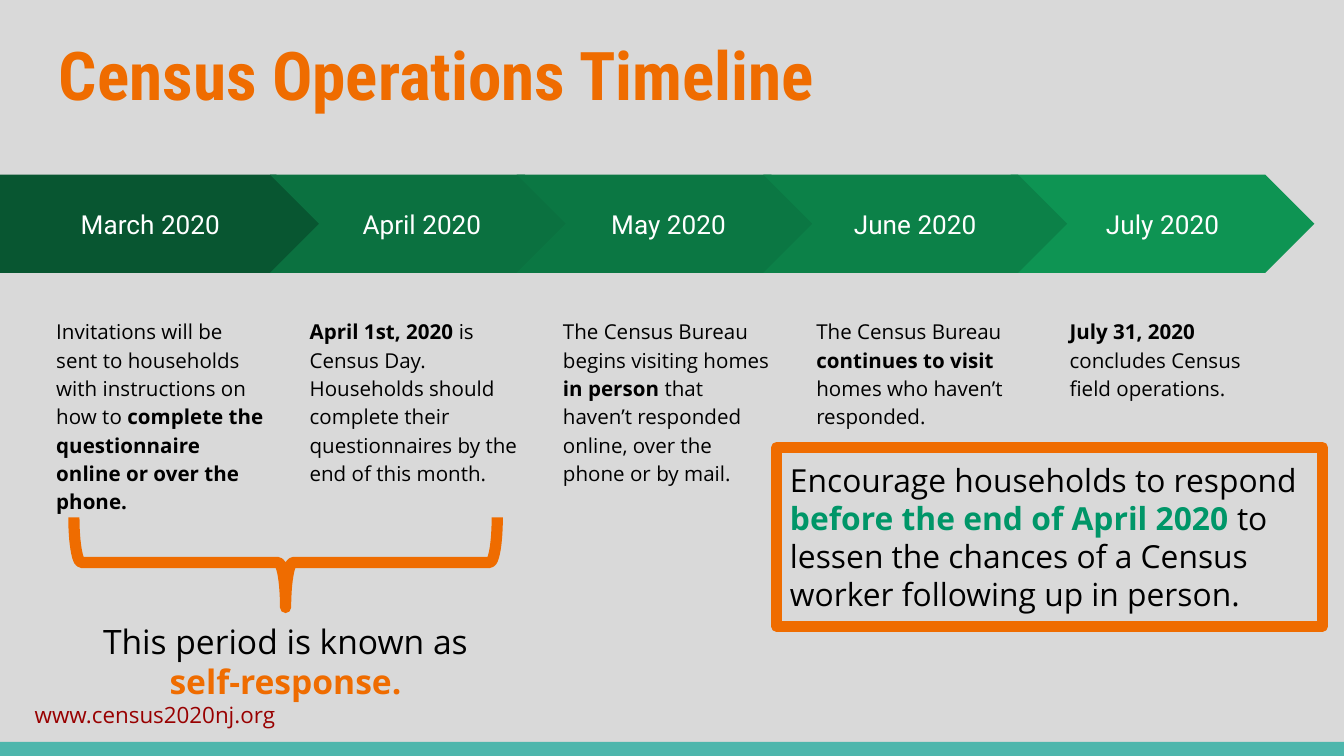
"""Build the census operations timeline slide."""
from dataclasses import dataclass

from lxml import etree
from pptx import Presentation
from pptx import util as u
from pptx.dml.color import RGBColor
from pptx.enum import shapes, text
from pptx.oxml.ns import qn

PX = 4572


@dataclass(frozen=True)
class Theme:
    """Colours, fonts and type sizes."""
    back: str = "D9D9D9"
    ink: str = "000000"
    white: str = "FFFFFF"
    accent: str = "EF6C00"
    green: str = "009668"
    teal: str = "4DB6AC"
    link: str = "980000"
    steps: tuple = ("085631", "0B7140", "0B7743", "0C8148", "0E9453")
    body: str = "Open Sans"
    label: str = "Roboto"
    head: str = "Roboto Condensed"
    title: int = 36
    large: int = 18
    call: int = 17
    month: int = 14
    small: int = 12
    note: int = 11


def write(shape, words, size, font, color, bold=None, align="LEFT", anchor="TOP", space=None):
    """Fill a shape with text whose starred parts are bold in the bold colour."""
    frame = shape.text_frame
    frame.word_wrap = True
    frame.vertical_anchor = getattr(text.MSO_ANCHOR, anchor)
    frame.margin_left = frame.margin_right = frame.margin_top = frame.margin_bottom = 20 * PX
    para = frame.paragraphs[0]
    para.alignment = getattr(text.PP_ALIGN, align)
    if space:
        para.line_spacing = space
    for n, part in enumerate(words.split("*")):
        if part:
            run = para.add_run()
            run.text = part
            run.font.name = font
            run.font.size = u.Pt(size)
            run.font.bold = n % 2 == 1
            run.font.color.rgb = RGBColor.from_string((bold or color) if n % 2 else color)


class Deck:
    """Hold the theme and the current slide."""

    def __init__(self, theme):
        """Open a blank slide with a plain background."""
        self.theme = theme
        self.show = Presentation()
        self.show.slide_width, self.show.slide_height = 2000 * PX, 1125 * PX
        self.slide = self.show.slides.add_slide(self.show.slide_layouts[6])
        fill = self.slide.background.fill
        fill.solid()
        fill.fore_color.rgb = RGBColor.from_string(theme.back)

    def label(self, box, words, **style):
        """Add a text box."""
        shape = self.slide.shapes.add_textbox(*(v * PX for v in box))
        write(shape, words, **style)

    def block(self, kind, box, color):
        """Add a filled shape without a line."""
        shape = self.shape(kind, box)
        shape.fill.solid()
        shape.fill.fore_color.rgb = RGBColor.from_string(color)
        shape.line.fill.background()
        return shape

    def frame(self, kind, box):
        """Add a hollow shape with a thick, round-joined line."""
        shape = self.shape(kind, box)
        shape.fill.background()
        shape.line.color.rgb = RGBColor.from_string(self.theme.accent)
        shape.line.width = u.Pt(6)
        etree.SubElement(shape.line._get_or_add_ln(), qn("a:round"))
        return shape

    def shape(self, kind, box):
        """Add a preset shape without a shadow."""
        shape = self.slide.shapes.add_shape(
            getattr(shapes.MSO_SHAPE, kind), *(v * PX for v in box))
        shape.shadow.inherit = False
        return shape


STEPS = (
    ("March 2020", "Invitations will be sent to households with instructions on how to "
     "*complete the questionnaire online or over the phone.*"),
    ("April 2020", "*April 1st, 2020 *is Census Day. Households should complete their "
     "questionnaires by the end of this month."),
    ("May 2020", "The Census Bureau begins visiting homes *in person* that haven’t "
     "responded online, over the phone or by mail."),
    ("June 2020", "The Census Bureau *continues to visit *homes who haven’t responded."),
    ("July 2020", "*July 31, 2020* concludes Census field operations."),
)


def main():
    """Draw the slide and save it."""
    look = Theme()
    deck = Deck(look)
    deck.label((32, 1024, 486, 62), "www.census2020nj.org",
               size=look.small, font=look.body, color=look.link)
    deck.block("RECTANGLE", (0, 1104, 2000, 21), look.teal)
    deck.label((68, 30, 1864, 154), "*Census Operations Timeline*",
               size=look.title, font=look.head, color=look.accent)

    for n in (0, 1, 2, 4, 3):
        month, note = STEPS[n]
        if n:
            kind, left, width = "CHEVRON", 402 + 1102 * (n - 1) // 3, 452
        else:
            kind, left, width = "PENTAGON", 0, 484
        arrow = deck.block(kind, (left, 260, width, 146), look.steps[n])
        write(arrow, month, size=look.month, font=look.label, color=look.white,
              align="CENTER", anchor="MIDDLE")
        deck.label((64 + 377 * n, 450, 356, 514), note,
                   size=look.note, font=look.body, color=look.ink, space=1.15)

    brace = deck.frame("LEFT_BRACE", (358, 522, 134, 630))
    brace.rotation = 270
    deck.label((82, 904, 686, 114), "This period is known as *self-response.*",
               size=look.large, font=look.body, color=look.ink,
               bold=look.accent, align="CENTER")
    advice = deck.frame("RECTANGLE", (1156, 666, 812, 266))
    write(advice, "Encourage households to respond *before the end of April 2020 *to lessen "
          "the chances of a Census worker following up in person.",
          size=look.call, font=look.body, color=look.ink, bold=look.green)
    deck.show.save("out.pptx")


if __name__ == "__main__":
    main()
